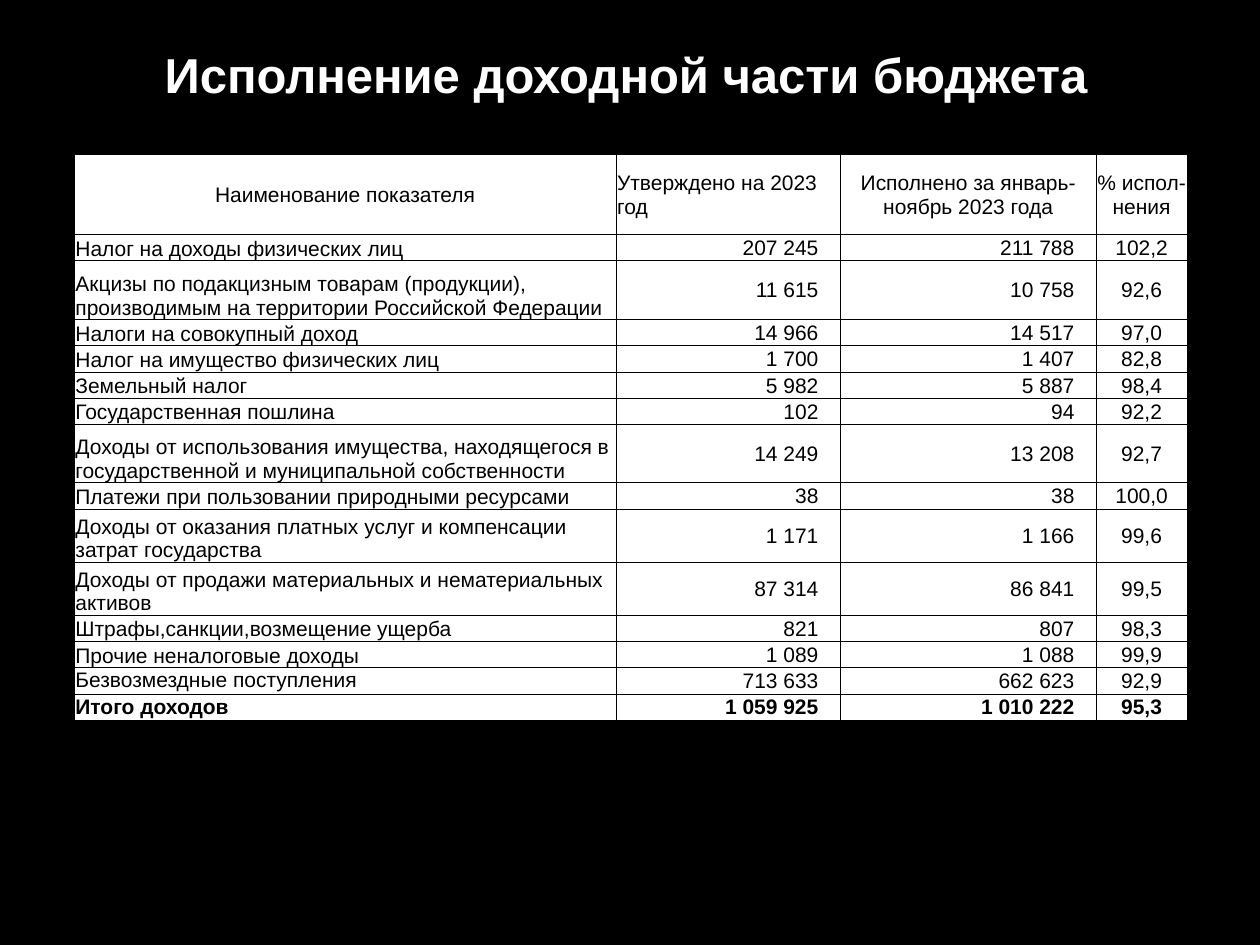
from dataclasses import dataclass

from lxml import etree
from pptx import Presentation
from pptx import util as u
from pptx.dml.color import RGBColor
from pptx.enum import text
from pptx.oxml.ns import qn

FONT = "Arial"
BLACK, WHITE = "000000", "FFFFFF"
MIDDLE, BOTTOM, TOP = text.MSO_ANCHOR.MIDDLE, text.MSO_ANCHOR.BOTTOM, text.MSO_ANCHOR.TOP
LEFT, CENTER = text.PP_ALIGN.LEFT, text.PP_ALIGN.CENTER
RIGHT, JUSTIFY = text.PP_ALIGN.RIGHT, text.PP_ALIGN.JUSTIFY

COLUMN_WIDTHS = (10.92, 4.52, 5.16, 1.83)
HEADER_HEIGHT = 1.6
LINE_HEIGHT = 0.53
INSET, FIGURE_INSET = 0.02, 0.44


@dataclass
class Income:
    name: str
    approved: str
    executed: str
    percent: str
    height: float = LINE_HEIGHT
    name_anchor: text.MSO_ANCHOR = BOTTOM
    name_align: text.PP_ALIGN = LEFT
    figure_anchor: text.MSO_ANCHOR = MIDDLE
    bold: bool = False


HEADERS = (
    ("Наименование показателя", CENTER),
    ("Утверждено на 2023 год", LEFT),
    ("Исполнено за январь-ноябрь 2023 года", CENTER),
    ("% испол-нения", CENTER),
)

INCOMES = (
    Income("Налог на доходы физических лиц", "207 245", "211 788", "102,2"),
    Income("Акцизы по подакцизным товарам (продукции), производимым на территории "
           "Российской Федерации", "11 615", "10 758", "92,6", height=1.19),
    Income("Налоги на совокупный доход", "14 966", "14 517", "97,0"),
    Income("Налог на имущество физических лиц", "1 700", "1 407", "82,8"),
    Income("Земельный налог", "5 982", "5 887", "98,4"),
    Income("Государственная пошлина", "102", "94", "92,2", name_anchor=MIDDLE),
    Income("Доходы от использования имущества, находящегося в государственной "
           "и муниципальной собственности", "14 249", "13 208", "92,7", height=1.17),
    Income("Платежи при пользовании природными ресурсами", "38", "38", "100,0"),
    Income("Доходы от оказания платных услуг и компенсации затрат государства",
           "1 171", "1 166", "99,6", height=1.07),
    Income("Доходы от продажи материальных и нематериальных активов",
           "87 314", "86 841", "99,5", height=1.07),
    Income("Штрафы,санкции,возмещение ущерба", "821", "807", "98,3"),
    Income("Прочие неналоговые доходы", "1 089", "1 088", "99,9"),
    Income("Безвозмездные поступления", "713 633", "662 623", "92,9",
           name_anchor=TOP, name_align=JUSTIFY),
    Income("Итого доходов", "1 059 925", "1 010 222", "95,3",
           name_anchor=TOP, name_align=JUSTIFY, figure_anchor=TOP, bold=True),
)


def paint(color_format, color: str) -> None:
    color_format.rgb = RGBColor.from_string(color)


def format_text(frame, size: float, color: str, align, bold: bool) -> None:
    for paragraph in frame.paragraphs:
        paragraph.alignment = align
        for run in paragraph.runs:
            run.font.name, run.font.size, run.font.bold = FONT, u.Pt(size), bold
            paint(run.font.color, color)


def add_borders(cell, color: str, width: float) -> None:
    properties = cell._tc.get_or_add_tcPr()
    for position, side in enumerate(("a:lnL", "a:lnR", "a:lnT", "a:lnB")):
        line = etree.Element(qn(side), w=str(u.Pt(width)))
        fill = etree.SubElement(line, qn("a:solidFill"))
        etree.SubElement(fill, qn("a:srgbClr"), val=color)
        properties.insert(position, line)


def fill_cell(cell, words: str, align, anchor=MIDDLE, bold: bool = False) -> None:
    cell.text_frame.text = words
    format_text(cell.text_frame, 12, BLACK, align, bold)
    cell.vertical_anchor = anchor
    cell.margin_left = cell.margin_top = u.Cm(INSET)
    cell.margin_right = u.Cm(FIGURE_INSET if align == RIGHT else INSET)
    cell.margin_bottom = 0
    cell.fill.solid()
    paint(cell.fill.fore_color, WHITE)
    add_borders(cell, BLACK, 0.5)


def add_income_table(slide) -> None:
    heights = [HEADER_HEIGHT] + [income.height for income in INCOMES]
    table = slide.shapes.add_table(
        len(heights), len(COLUMN_WIDTHS), u.Cm(1.5), u.Cm(3.12),
        u.Cm(sum(COLUMN_WIDTHS)), u.Cm(sum(heights))).table
    table.first_row = table.horz_banding = False
    for column, width in zip(table.columns, COLUMN_WIDTHS):
        column.width = u.Cm(width)
    for row, height in zip(table.rows, heights):
        row.height = u.Cm(height)

    for column, (header, align) in enumerate(HEADERS):
        fill_cell(table.cell(0, column), header, align)
    for row, income in enumerate(INCOMES, start=1):
        fill_cell(table.cell(row, 0), income.name, income.name_align,
                  income.name_anchor, income.bold)
        for column, figure in enumerate((income.approved, income.executed), start=1):
            fill_cell(table.cell(row, column), figure, RIGHT,
                      income.figure_anchor, income.bold)
        fill_cell(table.cell(row, 3), income.percent, CENTER, bold=income.bold)


def main() -> None:
    deck = Presentation()
    deck.slide_width, deck.slide_height = u.Cm(25.4), u.Cm(19.05)
    slide = deck.slides.add_slide(deck.slide_layouts[5])
    slide.background.fill.solid()
    paint(slide.background.fill.fore_color, BLACK)

    # Heading
    title = slide.shapes.title
    title.left, title.top = u.Cm(1.19), u.Cm(0.58)
    title.width, title.height = u.Cm(22.86), u.Cm(1.83)
    title.text_frame.text = "Исполнение доходной части бюджета"
    title.text_frame.vertical_anchor = MIDDLE
    format_text(title.text_frame, 28, WHITE, CENTER, True)

    # Budget income by source
    add_income_table(slide)
    deck.save("out.pptx")


if __name__ == "__main__":
    main()
